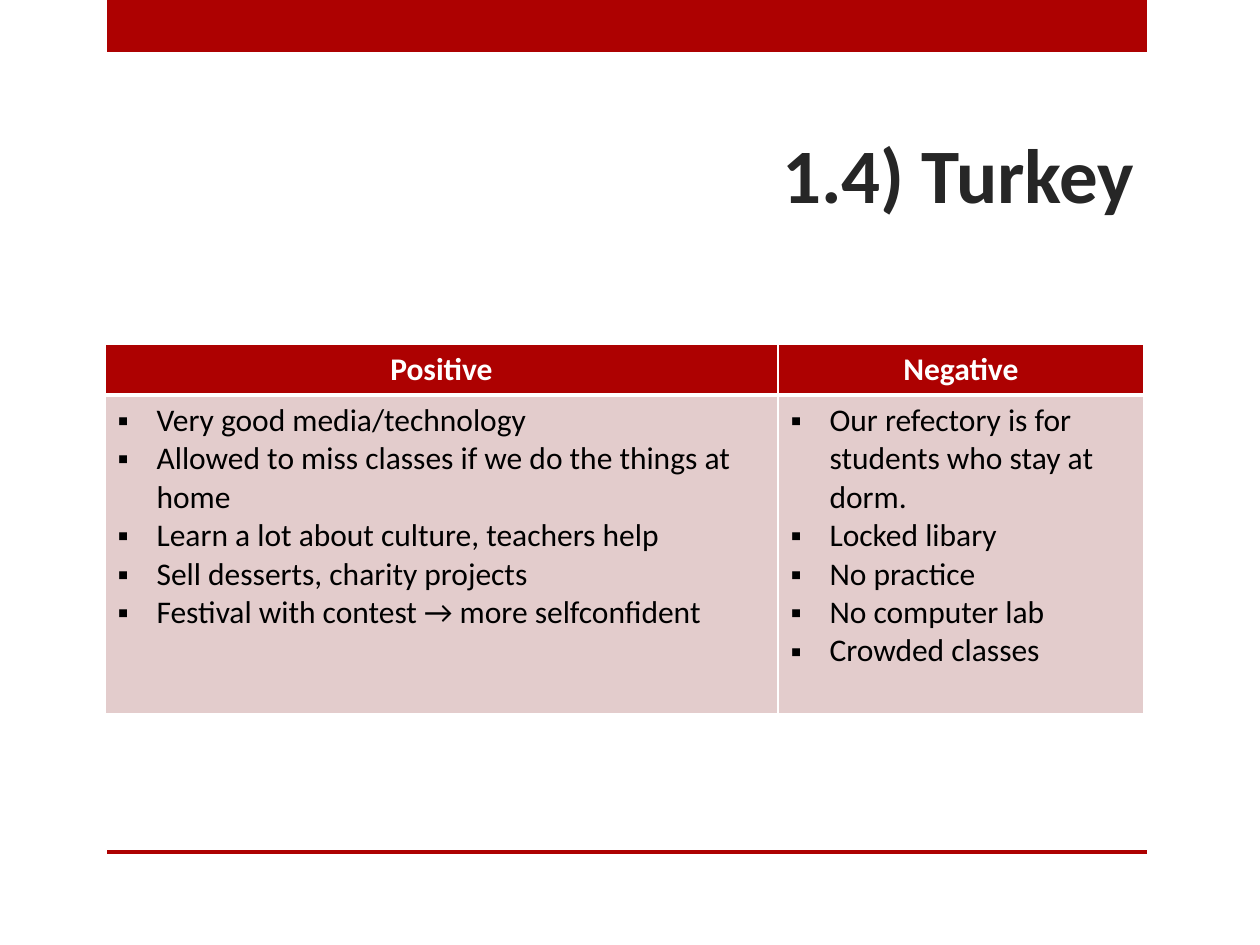
from lxml.etree import SubElement
from pptx import Presentation
from pptx.dml.color import RGBColor
from pptx.enum.shapes import MSO_SHAPE
from pptx.enum.text import MSO_ANCHOR, PP_ALIGN
from pptx.oxml.ns import qn
from pptx.util import Pt

PX = 914400 / 126
RED, PINK, WHITE = "AD0101", "E3CCCC", "FFFFFF"


def box(*sides):
    """Turn px lengths into EMU."""
    return [round(side * PX) for side in sides]


def add_run(para, text, size, color, bold=False):
    run = para.add_run()
    run.text = text
    font = run.font
    font.name, font.size, font.bold = "Calibri", Pt(size), bold
    font.color.rgb = RGBColor.from_string(color)


deck = Presentation()
deck.slide_width, deck.slide_height = box(1260, 945)
slide = deck.slides.add_slide(deck.slide_layouts[6])

# Top band and bottom rule
for top, height in [(0, 52), (850, 4)]:
    bar = slide.shapes.add_shape(MSO_SHAPE.RECTANGLE, *box(107, top, 1040, height))
    bar.shadow.inherit = False
    bar.fill.solid()
    bar.fill.fore_color.rgb = RGBColor.from_string(RED)
    bar.line.fill.background()

# Title
title = slide.shapes.add_textbox(*box(105, 54, 1042, 171)).text_frame
title.word_wrap = True
title.vertical_anchor = MSO_ANCHOR.BOTTOM
title.paragraphs[0].alignment = PP_ALIGN.RIGHT
add_run(title.paragraphs[0], "1.4) Turkey", 44, "262626", True)

# Table
columns = [
    ("Positive", 673, [
        "Very good media/technology",
        "Allowed to miss classes if we do the things at home",
        "Learn a lot about culture, teachers help",
        "Sell desserts, charity projects",
        "Festival with contest → more selfconfident",
    ]),
    ("Negative", 366, [
        "Our refectory is for students who stay at dorm.",
        "Locked libary",
        "No practice",
        "No computer lab",
        "Crowded classes",
    ]),
]
table = slide.shapes.add_table(2, 2, *box(105, 344, 1039, 370)).table
table.horz_banding = False
table.rows[0].height, table.rows[1].height = box(51, 319)
indent, = box(39)

for col, (head, width, points) in enumerate(columns):
    table.columns[col].width, = box(width)
    add_run(table.cell(0, col).text_frame.paragraphs[0], head, 18, WHITE, True)
    table.cell(0, col).text_frame.paragraphs[0].alignment = PP_ALIGN.CENTER

    body = table.cell(1, col).text_frame
    for num, point in enumerate(points):
        para = body.add_paragraph() if num else body.paragraphs[0]
        props = para._p.get_or_add_pPr()
        props.set("marL", str(indent))
        props.set("indent", str(-indent))
        SubElement(props, qn("a:buFont"), typeface="Arial")
        SubElement(props, qn("a:buChar"), char="▪")
        add_run(para, point, 18, "000000")

    # Thin white edges, with a thick one between header and body
    for row, (fill, thick) in enumerate([(RED, "lnB"), (PINK, "lnT")]):
        cell = table.cell(row, col)
        props = cell._tc.get_or_add_tcPr()
        for side in ("lnL", "lnR", "lnT", "lnB"):
            edge = SubElement(props, qn(f"a:{side}"), w=str(Pt(3 if side == thick else 1)))
            paint = SubElement(edge, qn("a:solidFill"))
            SubElement(paint, qn("a:srgbClr"), val=WHITE)
        cell.fill.solid()
        cell.fill.fore_color.rgb = RGBColor.from_string(fill)

deck.save("out.pptx")
